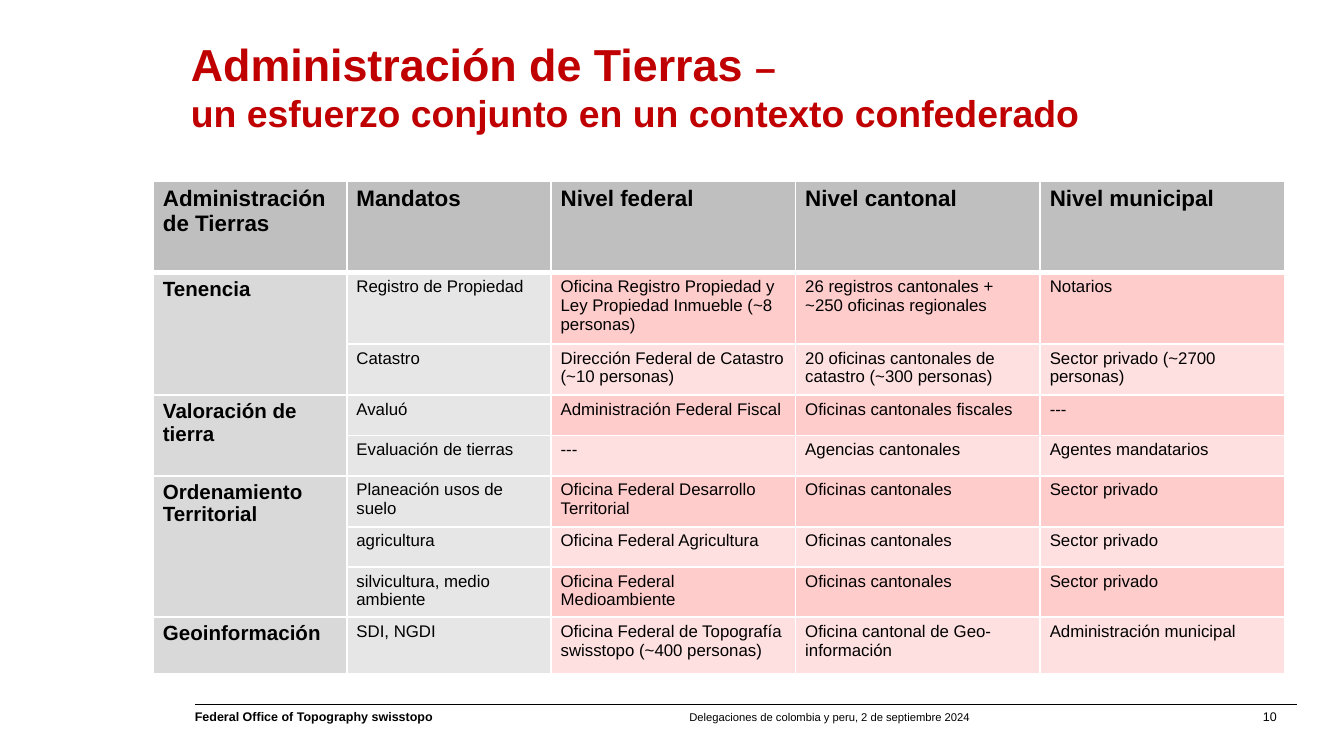
from lxml.etree import SubElement as Sub
from pptx import Presentation
from pptx.dml.color import RGBColor
from pptx.enum.shapes import MSO_CONNECTOR as Link
from pptx.enum.text import PP_ALIGN as Align
from pptx.oxml.ns import qn
from pptx.util import Inches, Pt

WIDTHS = [1.44, 1.52, 1.82, 1.82, 1.82]
HEIGHTS = [0.68, 0.53, 0.38, 0.3, 0.3, 0.38, 0.3, 0.36, 0.42]

# An empty first entry continues the topic above
ROWS = [
    ["Administración de Tierras", "Mandatos", "Nivel federal",
     "Nivel cantonal", "Nivel municipal"],
    ["Tenencia", "Registro de Propiedad",
     "Oficina Registro Propiedad y Ley Propiedad Inmueble (~8 personas)",
     "26 registros cantonales + ~250 oficinas regionales", "Notarios"],
    ["", "Catastro", "Dirección Federal de Catastro (~10 personas)",
     "20 oficinas cantonales de catastro (~300 personas)",
     "Sector privado (~2700 personas)"],
    ["Valoración de tierra", "Avaluó", "Administración Federal Fiscal",
     "Oficinas cantonales fiscales", "---"],
    ["", "Evaluación de tierras", "---", "Agencias cantonales",
     "Agentes mandatarios"],
    ["Ordenamiento Territorial", "Planeación usos de suelo",
     "Oficina Federal Desarrollo Territorial", "Oficinas cantonales",
     "Sector privado"],
    ["", "agricultura", "Oficina Federal Agricultura",
     "Oficinas cantonales", "Sector privado"],
    ["", "silvicultura, medio ambiente", "Oficina Federal Medioambiente",
     "Oficinas cantonales", "Sector privado"],
    ["Geoinformación", "SDI, NGDI",
     "Oficina Federal de Topografía swisstopo (~400 personas)",
     "Oficina cantonal de Geo-información", "Administración municipal"],
]


def paint(target, color):
    target.rgb = RGBColor.from_string(color)


def style(run, size, bold=False, color="000000"):
    run.font.name = "Arial"
    run.font.size = Pt(size)
    run.font.bold = bold
    paint(run.font.color, color)


def add_box(slide, left, top, width, height):
    box = slide.shapes.add_textbox(
        Inches(left), Inches(top), Inches(width), Inches(height))
    frame = box.text_frame
    frame.word_wrap = True
    frame.margin_left = frame.margin_right = 0
    frame.margin_top = frame.margin_bottom = 0
    return frame.paragraphs[0]


def add_title(slide):
    para = add_box(slide, 1.42, 0.27, 8.31, 0.81)
    para.text = "Administración de Tierras \vun esfuerzo conjunto en un contexto confederado"
    first, second = para.runs
    style(first, 24, True, "C00000")
    style(second, 20, True, "C00000")
    # The smaller dash closes the first line
    dash = para.add_run()
    dash.text = "– "
    style(dash, 20, True, "C00000")
    first._r.addnext(dash._r)


def add_note(slide, text, left, top, width, size, bold=False, align=Align.LEFT):
    para = add_box(slide, left, top, width, 0.12)
    para.text = text
    para.alignment = align
    para.line_spacing = 1.05
    style(para.runs[0], size, bold)


def add_rule(slide, left, right, top):
    rule = slide.shapes.add_connector(
        Link.STRAIGHT, Inches(left), Inches(top), Inches(right), Inches(top))
    paint(rule.line.color, "000000")
    rule.line.width = Pt(0.75)
    Sub(rule._element.spPr, qn("a:effectLst"))


def add_edges(cell, row):
    thick = {"lnB": 3} if row == 0 else {"lnT": 3} if row == 1 else {}
    for side in ("lnL", "lnR", "lnT", "lnB"):
        edge = Sub(cell._tc.get_or_add_tcPr(), qn("a:" + side),
                   w=str(Pt(thick.get(side, 1))))
        Sub(Sub(edge, qn("a:solidFill")), qn("a:srgbClr"), val="FFFFFF")


def pick_fill(row, col):
    if row == 0:
        return "BFBFBF"
    return ["D9D9D9", "E6E6E6", "FFCCCC", "FFCCCC", "FFCCCC"][col]


def fill_cell(cell, text, row, col):
    cell.margin_left = cell.margin_right = Pt(5.2)
    cell.margin_top = cell.margin_bottom = Pt(2.6)
    add_edges(cell, row)
    cell.fill.solid()
    paint(cell.fill.fore_color, pick_fill(row, col))
    # Every second row of the level columns is paler
    if row and row % 2 == 0 and col > 1:
        shade = cell._tc.tcPr.find(qn("a:solidFill")).find(qn("a:srgbClr"))
        Sub(shade, qn("a:alpha"), val="60000")
    if text:
        cell.text_frame.text = text
        size = 12 if row == 0 else 11 if col == 0 else 9
        style(cell.text_frame.paragraphs[0].runs[0], size, row == 0 or col == 0)


def add_grid(slide):
    table = slide.shapes.add_table(
        len(ROWS), len(WIDTHS), Inches(1.14), Inches(1.35),
        Inches(sum(WIDTHS)), Inches(sum(HEIGHTS))).table
    table.horz_banding = False
    for column, width in zip(table.columns, WIDTHS):
        column.width = Inches(width)
    for line, height in zip(table.rows, HEIGHTS):
        line.height = Inches(height)
    for row, texts in enumerate(ROWS):
        for col, text in enumerate(texts):
            fill_cell(table.cell(row, col), text, row, col)
    # Join each topic with the rows it spans
    starts = [row for row, texts in enumerate(ROWS) if texts[0]]
    for first, after in zip(starts, starts[1:] + [len(ROWS)]):
        if after - first > 1:
            table.cell(first, 0).merge(table.cell(after - 1, 0))


def main():
    deck = Presentation()
    # Widescreen, 16 to 9
    deck.slide_width = Inches(10)
    deck.slide_height = Inches(10 * 9 / 16)
    slide = deck.slides.add_slide(deck.slide_layouts[6])
    # Footer
    add_note(slide, "10", 7.05, 5.27, 2.45, 6.75, align=Align.RIGHT)
    add_note(slide, "Federal Office of Topography swisstopo",
             1.45, 5.27, 3.6, 6.75, bold=True)
    add_rule(slide, 1.45, 9.65, 5.24)
    add_note(slide, "Delegaciones de colombia y peru, 2 de septiembre 2024",
             5.13, 5.28, 3.84, 6)
    # Heading and table
    add_title(slide)
    add_grid(slide)
    deck.save("out.pptx")


if __name__ == "__main__":
    main()
